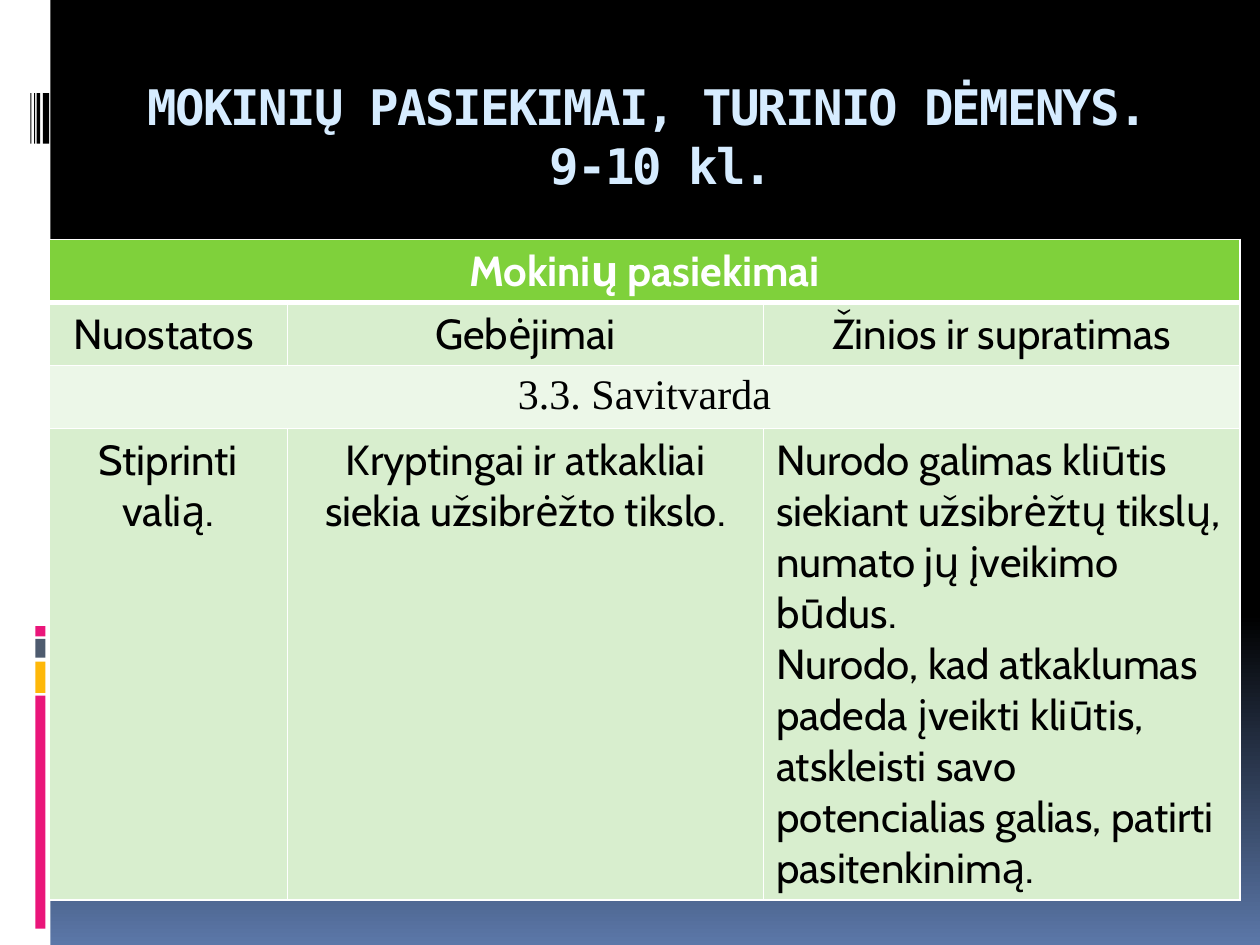
from typing import NamedTuple

from lxml import etree
from pptx import Presentation
from pptx import util as u
from pptx.dml.color import RGBColor
from pptx.enum import shapes, text
from pptx.oxml.ns import qn

HUES = {
    "white": "FFFFFF", "black": "000000", "blue": "5B77A8", "pink": "EA157A",
    "gold": "FEB80A", "slate": "4E5B6F", "ice": "D6ECFF",
    "green": "7FD13B", "mint": "D8EECE", "pale": "ECF7E8",
}
MID, LEFT = text.PP_ALIGN.CENTER, text.PP_ALIGN.LEFT


class Bar(NamedTuple):
    x: float
    y: float
    w: float
    h: float
    hue: str


class Row(NamedTuple):
    cells: list[str]
    high: float
    fill: str
    font: str = "Cabin"
    hue: str = "black"
    bold: bool = False


BARS = [
    Bar(0, 0, 0.4, 7.5, "white"),
    Bar(0.28, 5.52, 0.08, 1.85, "pink"),
    Bar(0.28, 5.25, 0.08, 0.25, "gold"),
    Bar(0.28, 5.07, 0.08, 0.15, "slate"),
    Bar(0.28, 4.97, 0.08, 0.08, "pink"),
    *(Bar(x, 0.74, w, 0.4, "black")
      for x, w in [(0.34, 0.05), (0.29, 0.03), (0.27, 0.01), (0.24, 0.01)]),
]
COLS = [1.89, 3.78, 3.78]
ROWS = [
    Row(["Mokinių pasiekimai"], 0.5, "green", hue="white", bold=True),
    Row(["Nuostatos ", "Gebėjimai", "Žinios ir supratimas"], 0.5, "mint"),
    Row(["3.3. Savitvarda"], 0.48, "pale", font="Times New Roman"),
    Row(["Stiprinti valią.",
         "Kryptingai ir atkakliai siekia užsibrėžto tikslo.",
         "Nurodo galimas kliūtis siekiant užsibrėžtų tikslų, numato jų "
         "įveikimo būdus.\n"
         "Nurodo, kad atkaklumas padeda įveikti kliūtis, atskleisti savo "
         "potencialias galias, patirti pasitenkinimą."], 3.74, "mint"),
]


def rgb(hue: str) -> RGBColor:
    return RGBColor.from_string(HUES[hue])


def write(frame, words: str, *, size: float, font: str, hue: str,
          bold: bool = False, align=MID, space: float = 0) -> None:
    """Fill a text frame; space is the letter spacing in points."""
    frame.word_wrap = True
    frame.text = words
    for para in frame.paragraphs:
        para.alignment = align
        for run in para.runs:
            run.font.size = u.Pt(size)
            run.font.name = font
            run.font.bold = bold
            run.font.color.rgb = rgb(hue)
            if space:
                run.font._element.set("spc", str(round(space * 100)))


def paint(slide) -> None:
    """Fade the background from black to blue at the foot."""
    fill = slide.background.fill
    fill.gradient()
    fill.gradient_angle = 270
    for stop, place, hue in zip(fill.gradient_stops, (0.65, 1), ("black", "blue")):
        stop.position = place
        stop.color.rgb = rgb(hue)


def draw_bar(slide, bar: Bar) -> None:
    shape = slide.shapes.add_shape(
        shapes.MSO_SHAPE.RECTANGLE, *map(u.Inches, (bar.x, bar.y, bar.w, bar.h)))
    shape.shadow.inherit = False
    shape.fill.solid()
    shape.fill.fore_color.rgb = rgb(bar.hue)
    shape.line.fill.background()


def edge(cell, top: float, foot: float) -> None:
    """Give a cell white borders, with top and foot widths in points."""
    props = cell._tc.get_or_add_tcPr()
    for side, width in zip("LRTB", (1, 1, top, foot)):
        line = etree.SubElement(props, qn(f"a:ln{side}"), w=str(u.Pt(width)))
        fill = etree.SubElement(line, qn("a:solidFill"))
        etree.SubElement(fill, qn("a:srgbClr"), val=HUES["white"])


def draw_table(slide) -> None:
    frame = slide.shapes.add_table(
        len(ROWS), len(COLS), u.Inches(0.39), u.Inches(1.9),
        u.Inches(sum(COLS)), u.Inches(sum(row.high for row in ROWS)))
    table = frame.table
    table.first_row = table.horz_banding = False
    for col, wide in zip(table.columns, COLS):
        col.width = u.Inches(wide)
    for i, row in enumerate(ROWS):
        table.rows[i].height = u.Inches(row.high)
        for j in range(len(COLS)):
            cell = table.cell(i, j)
            edge(cell, 3 if i == 1 else 1, 3 if i == 0 else 1)
            cell.fill.solid()
            cell.fill.fore_color.rgb = rgb(row.fill)
        if len(row.cells) == 1:
            table.cell(i, 0).merge(table.cell(i, len(COLS) - 1))
        for j, words in enumerate(row.cells):
            write(table.cell(i, j).text_frame, words, size=24, font=row.font,
                  hue=row.hue, bold=row.bold,
                  align=LEFT if "\n" in words else MID)


def main() -> None:
    deck = Presentation()
    deck.slide_width, deck.slide_height = u.Inches(10), u.Inches(7.5)
    slide = deck.slides.add_slide(deck.slide_layouts[6])
    paint(slide)
    for bar in BARS:
        draw_bar(slide, bar)
    title = slide.shapes.add_textbox(*map(u.Inches, (1, 0.56, 8.5, 1)))
    write(title.text_frame, "MOKINIŲ PASIEKIMAI, TURINIO DĖMENYS. \v9-10 kl.",
          size=28, font="DejaVu Sans Mono", hue="ice", bold=True, space=-1)
    draw_table(slide)
    deck.save("out.pptx")


if __name__ == "__main__":
    main()
